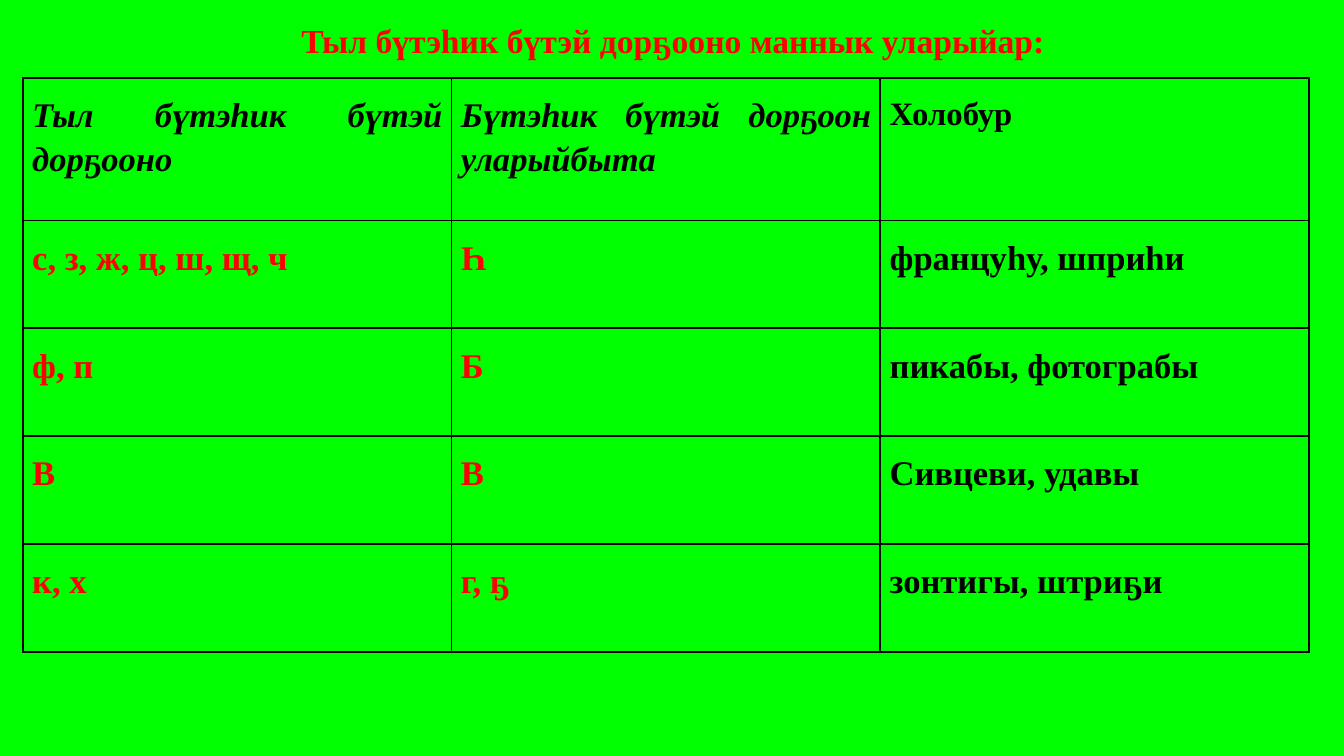
from lxml.etree import SubElement
from pptx import Presentation
from pptx.dml.color import RGBColor
from pptx.enum.text import MSO_AUTO_SIZE, PP_ALIGN
from pptx.oxml.ns import qn
from pptx.util import Inches, Pt

GREEN = RGBColor(0, 255, 0)
RED = RGBColor(255, 0, 0)
BLACK = RGBColor(0, 0, 0)
FONT = "Times New Roman"
TITLE = "Тыл бүтэһик бүтэй дорҕооно маннык уларыйар: "
ROWS = [
    ("Тыл бүтэһик бүтэй дорҕооно", "Бүтэһик бүтэй дорҕоон уларыйбыта", "Холобур"),
    ("с, з, ж, ц, ш, щ, ч", "Һ", "француһу, шприһи"),
    ("ф, п", "Б", "пикабы, фотограбы"),
    ("В", "В", "Сивцеви, удавы"),
    ("к, х", "г, ҕ", "зонтигы, штриҕи"),
]


def write(frame, text, size, color, align, italic=False):
    frame.text = text
    line = frame.paragraphs[0]
    line.alignment = align
    font = line.runs[0].font
    font.name = FONT
    font.size = Pt(size)
    font.bold = True
    font.italic = italic
    font.color.rgb = color
    return line


def add_title(slide):
    box = slide.shapes.add_textbox(Inches(0.34), Inches(0.1), Inches(9.4), Inches(0.4))
    frame = box.text_frame
    frame.word_wrap = True
    frame.auto_size = MSO_AUTO_SIZE.SHAPE_TO_FIT_TEXT
    write(frame, TITLE, 18, RED, PP_ALIGN.CENTER)


def set_border(cell):
    props = cell._tc.get_or_add_tcPr()
    for side in ("a:lnL", "a:lnR", "a:lnT", "a:lnB"):
        edge = SubElement(props, qn(side), w=str(Pt(1)))
        fill = SubElement(edge, qn("a:solidFill"))
        SubElement(fill, qn("a:srgbClr"), val=str(BLACK))


def fill_cell(cell, text, row, col):
    head = row == 0
    label = head and col == 2
    color = BLACK if head or col == 2 else RED
    align = PP_ALIGN.LEFT if label else PP_ALIGN.JUSTIFY
    size = 17.5 if label else 18.5
    line = write(cell.text_frame, text, size, color, align, head and not label)
    line.line_spacing = 1.15
    line.space_before = Pt(12)
    line.space_after = Pt(6 if label else 12)
    cell.margin_left = cell.margin_right = Inches(0.07)
    cell.margin_top = cell.margin_bottom = Inches(0.1)
    set_border(cell)
    cell.fill.background()


def add_grid(slide):
    width, height, top = Inches(9.57), Inches(4.27), Inches(1.06)
    shape = slide.shapes.add_table(
        len(ROWS), 3, Inches(0.17), Inches(0.58), width, height)
    table = shape.table
    table.first_row = False
    table.horz_banding = False
    for col in table.columns:
        col.width = width // 3
    for row, texts in enumerate(ROWS):
        table.rows[row].height = (height - top) // (len(ROWS) - 1) if row else top
        for col, text in enumerate(texts):
            fill_cell(table.cell(row, col), text, row, col)


def main():
    deck = Presentation()
    deck.slide_width = Inches(10)
    deck.slide_height = deck.slide_width * 9 // 16
    slide = deck.slides.add_slide(deck.slide_layouts[6])
    back = slide.background.fill
    back.solid()
    back.fore_color.rgb = GREEN
    add_grid(slide)
    add_title(slide)
    deck.save("out.pptx")


if __name__ == "__main__":
    main()
